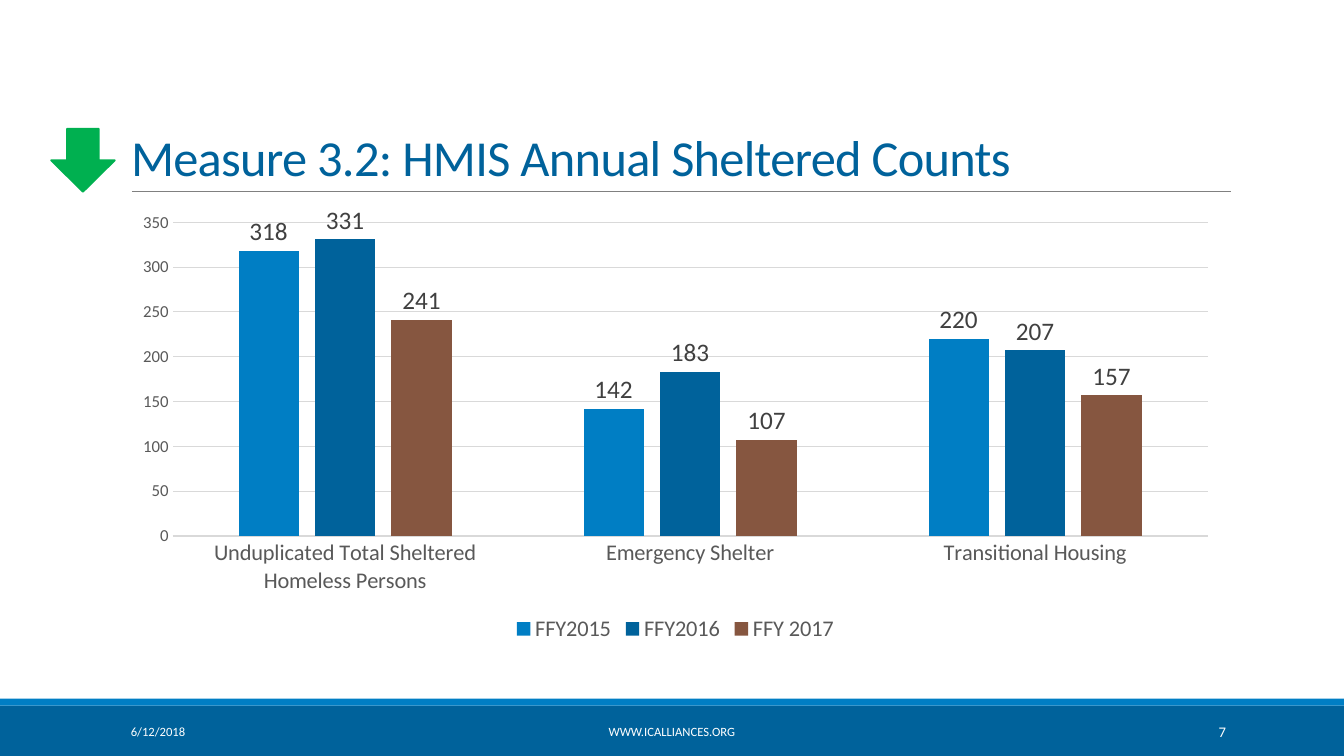
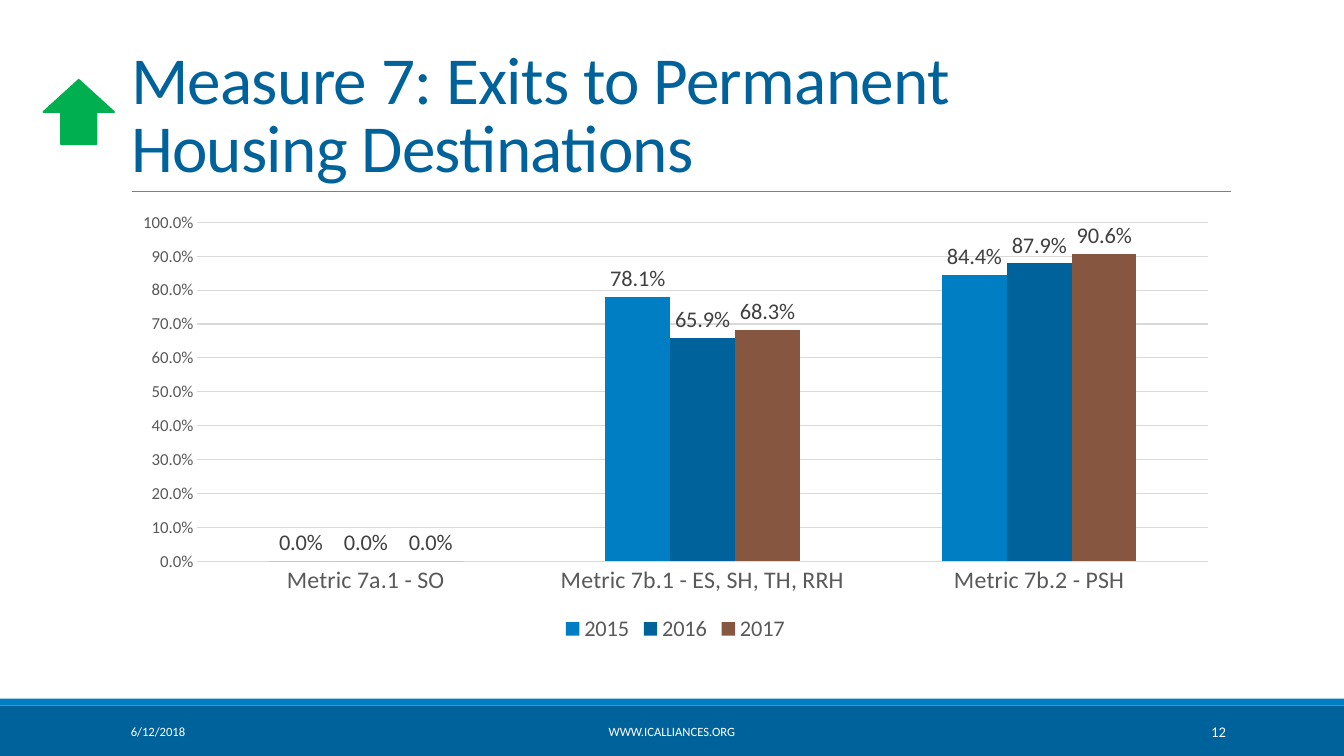
"""Build two housing measure slides, each with a trend arrow and a column chart."""
from lxml.etree import SubElement
from pptx import Presentation
from pptx.chart.data import CategoryChartData
from pptx.dml.color import RGBColor
from pptx.enum.chart import (XL_CHART_TYPE, XL_LABEL_POSITION,
                             XL_LEGEND_POSITION, XL_TICK_MARK)
from pptx.enum.shapes import MSO_CONNECTOR, MSO_SHAPE
from pptx.enum.text import MSO_ANCHOR, MSO_AUTO_SIZE, PP_ALIGN
from pptx.oxml.ns import qn
from pptx.util import Pt

FONT = "Calibri"
NAVY = RGBColor(0x00, 0x62, 0x9B)
BLUE = RGBColor(0x00, 0x7E, 0xC4)
BROWN = RGBColor(0x86, 0x56, 0x40)
GREEN = RGBColor(0x00, 0xB0, 0x50)
WHITE = RGBColor(0xFF, 0xFF, 0xFF)
GRAY = RGBColor(0x80, 0x80, 0x80)
PALE = RGBColor(0xD9, 0xD9, 0xD9)
DARK = RGBColor(0x40, 0x40, 0x40)
SLATE = RGBColor(0x59, 0x59, 0x59)
COLORS = (BLUE, NAVY, BROWN)

WIDTH, HEIGHT = 960, 540
LEFT, SPAN = 86.4, 792
RULE = 136.8
BANDS = [(504, 36, NAVY), (499, 5, BLUE)]
DATE, SITE = "6/12/2018", "WWW.ICALLIANCES.ORG"

SLIDES = [
    {
        "title": ["Measure 3.2: HMIS Annual Sheltered Counts"],
        "size": 36,
        "page": "7",
        "arrow": (MSO_SHAPE.DOWN_ARROW, 36.5, 92, 45.5, 45),
        "cats": ["Unduplicated Total Sheltered Homeless Persons",
                 "Emergency Shelter", "Transitional Housing"],
        "series": [("FFY2015", (318, 142, 220)),
                   ("FFY2016", (331, 183, 207)),
                   ("FFY 2017", (241, 107, 157))],
        "format": "General", "top": 350, "step": 50, "overlap": -27,
        "label": 18, "axis": 16,
    },
    {
        "title": ["Measure 7: Exits to Permanent", "Housing Destinations"],
        "size": 48,
        "page": "12",
        "arrow": (MSO_SHAPE.UP_ARROW, 31, 57, 50.5, 46),
        "cats": ["Metric 7a.1 - SO", "Metric 7b.1 - ES, SH, TH, RRH",
                 "Metric 7b.2 - PSH"],
        "series": [("2015", (0, 0.781, 0.844)),
                   ("2016", (0, 0.659, 0.879)),
                   ("2017", (0, 0.683, 0.906))],
        "format": "0.0%", "top": 1, "step": 0.1, "overlap": 0,
        "label": 16, "axis": 17,
    },
]


def style(font, size, color):
    font.name, font.size, font.bold = FONT, Pt(size), False
    font.color.rgb = color


def add_block(slide, kind, box, color, edge=0):
    block = slide.shapes.add_shape(kind, *map(Pt, box))
    block.shadow.inherit = False
    block.fill.solid()
    block.fill.fore_color.rgb = color
    if edge:
        block.line.color.rgb = color
        block.line.width = Pt(edge)
    else:
        block.line.fill.background()


def add_note(slide, text, left, width, size, align):
    frame = slide.shapes.add_textbox(
        Pt(left), Pt(508.3), Pt(width), Pt(28.8)).text_frame
    frame.word_wrap = True
    frame.vertical_anchor = MSO_ANCHOR.MIDDLE
    para = frame.paragraphs[0]
    para.alignment = align
    run = para.add_run()
    run.text = text
    style(run.font, size, WHITE)


def add_frame(slide, page):
    for top, height, color in BANDS:
        add_block(slide, MSO_SHAPE.RECTANGLE, (0, top, WIDTH, height), color)
    rule = slide.shapes.add_connector(
        MSO_CONNECTOR.STRAIGHT, Pt(94.3), Pt(RULE), Pt(879), Pt(RULE))
    rule.line.color.rgb = GRAY
    rule.line.width = Pt(0.5)
    SubElement(rule._element.spPr, qn("a:effectLst"))
    add_note(slide, DATE, LEFT, 194.4, 9, PP_ALIGN.LEFT)
    add_note(slide, SITE, 290.2, 379.4, 9, PP_ALIGN.CENTER)
    add_note(slide, page, 779.8, 103, 10.5, PP_ALIGN.RIGHT)


def set_title(slide, lines, size):
    title = slide.shapes.title
    title.left, title.top = Pt(LEFT), Pt(22.3)
    title.width, title.height = Pt(SPAN), Pt(114.5)
    frame = title.text_frame
    frame.word_wrap = True
    frame.auto_size = MSO_AUTO_SIZE.NONE
    frame.vertical_anchor = MSO_ANCHOR.BOTTOM
    para = frame.paragraphs[0]
    para.alignment = PP_ALIGN.LEFT
    para.line_spacing = 0.85
    for index, line in enumerate(lines):
        if index:
            para.add_line_break()
        run = para.add_run()
        run.text = line
        style(run.font, size, NAVY)
        run._r.get_or_add_rPr().set("spc", "-50")


def style_axes(chart, item):
    cat, val = chart.category_axis, chart.value_axis
    for axis, size in ((cat, item["axis"]), (val, 12)):
        axis.major_tick_mark = axis.minor_tick_mark = XL_TICK_MARK.NONE
        style(axis.tick_labels.font, size, SLATE)
    val.minimum_scale, val.maximum_scale = 0, item["top"]
    val.major_unit = item["step"]
    val.tick_labels.number_format = item["format"]
    val.tick_labels.number_format_is_linked = False
    val.format.line.fill.background()
    for line in (cat.format.line, val.major_gridlines.format.line):
        line.color.rgb = PALE
        line.width = Pt(0.75)


def add_columns(slide, item):
    data = CategoryChartData(number_format=item["format"])
    data.categories = item["cats"]
    for name, values in item["series"]:
        data.add_series(name, values)
    chart = slide.shapes.add_chart(
        XL_CHART_TYPE.COLUMN_CLUSTERED, Pt(LEFT), Pt(145.4), Pt(SPAN),
        Pt(316.8), data).chart
    chart.has_title = False
    style(chart.font, item["label"], SLATE)
    style_axes(chart, item)
    chart.has_legend = True
    chart.legend.position = XL_LEGEND_POSITION.BOTTOM
    chart.legend.include_in_layout = False
    style(chart.legend.font, 16, SLATE)
    plot = chart.plots[0]
    plot.gap_width, plot.overlap = 219, item["overlap"]
    plot.vary_by_categories = False
    for series, color in zip(plot.series, COLORS):
        series.format.fill.solid()
        series.format.fill.fore_color.rgb = color
        series.invert_if_negative = False
        labels = series.data_labels
        labels.show_value = True
        labels.position = XL_LABEL_POSITION.OUTSIDE_END
        labels.number_format = item["format"]
        labels.number_format_is_linked = False
        style(labels.font, item["label"], DARK)


def main():
    deck = Presentation()
    deck.slide_width, deck.slide_height = Pt(WIDTH), Pt(HEIGHT)
    for item in SLIDES:
        slide = deck.slides.add_slide(deck.slide_layouts[5])
        add_frame(slide, item["page"])
        set_title(slide, item["title"], item["size"])
        kind, *box = item["arrow"]
        add_block(slide, kind, box, GREEN, 1.25)
        add_columns(slide, item)
    deck.save("out.pptx")


if __name__ == "__main__":
    main()
